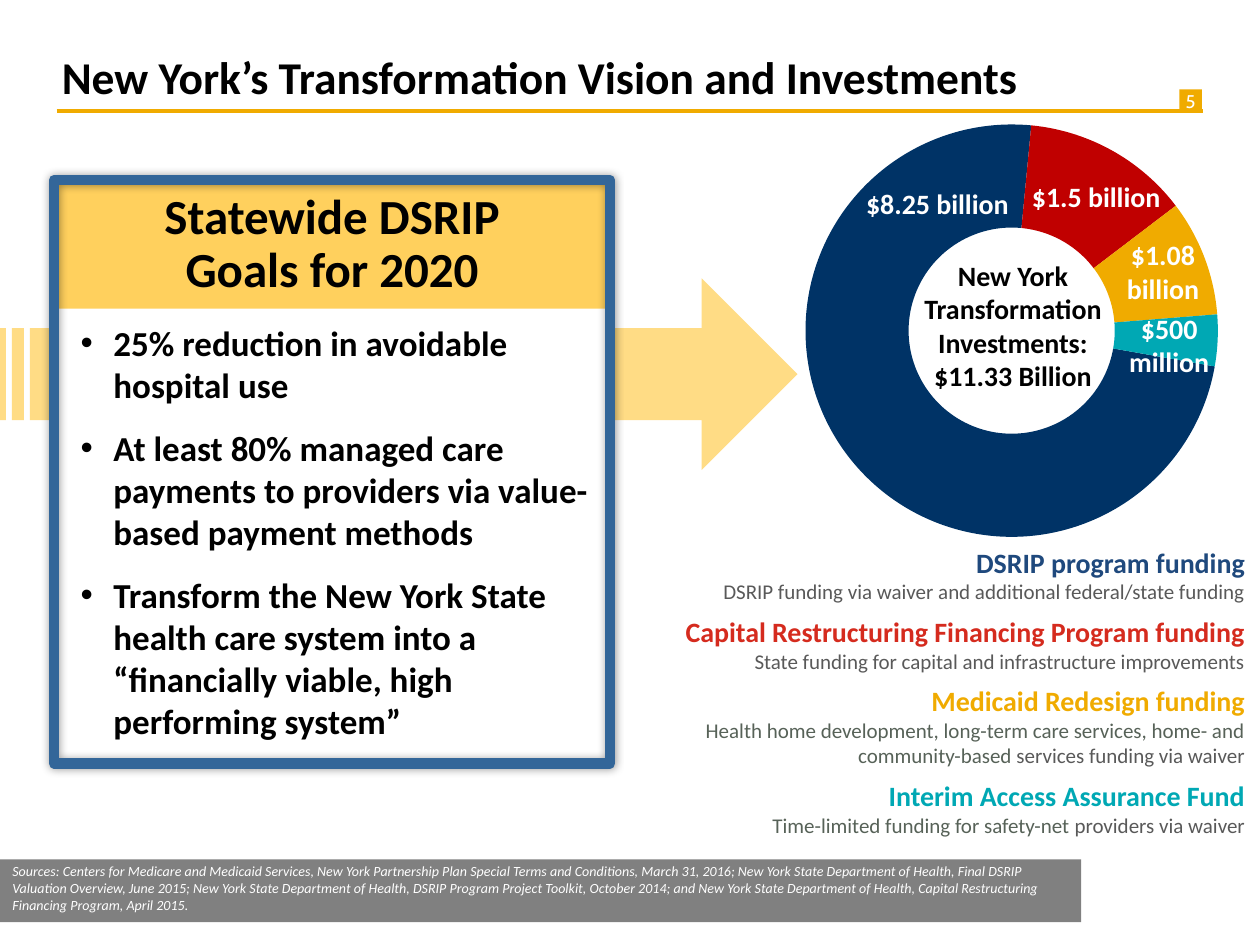
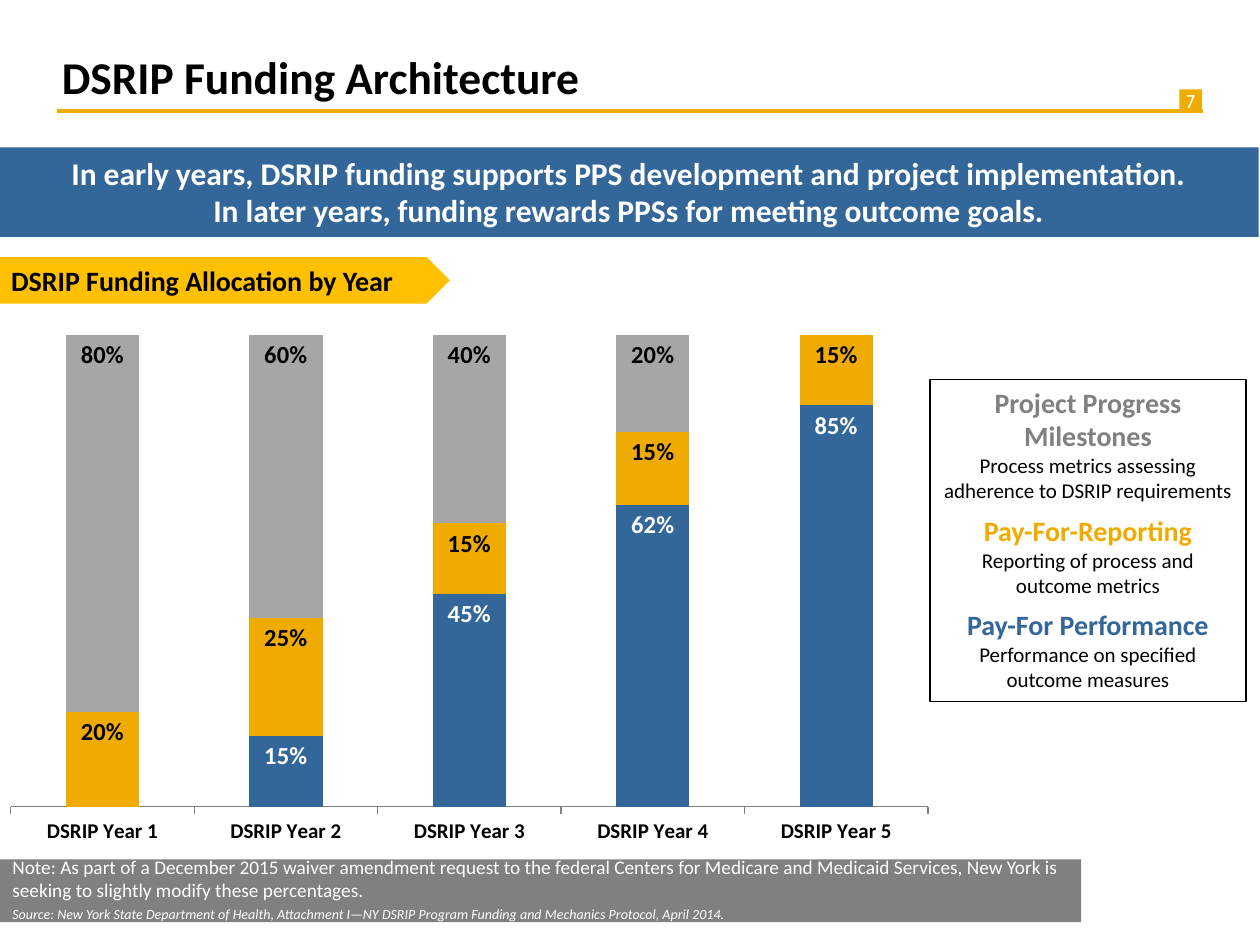
from copy import deepcopy
from dataclasses import dataclass

from lxml import etree
from pptx import Presentation
from pptx.chart.data import CategoryChartData
from pptx.dml.color import RGBColor
from pptx.enum.chart import XL_CHART_TYPE, XL_LABEL_POSITION, XL_TICK_LABEL_POSITION, XL_TICK_MARK
from pptx.enum.shapes import MSO_CONNECTOR, MSO_SHAPE
from pptx.enum.text import MSO_ANCHOR, MSO_AUTO_SIZE, PP_ALIGN
from pptx.oxml.ns import qn
from pptx.util import Inches, Pt

LEFT, CENTER, RIGHT = PP_ALIGN.LEFT, PP_ALIGN.CENTER, PP_ALIGN.RIGHT
TOP, MIDDLE, BOTTOM = MSO_ANCHOR.TOP, MSO_ANCHOR.MIDDLE, MSO_ANCHOR.BOTTOM
RECTANGLE = MSO_SHAPE.RECTANGLE
TITLE_AND_BODY, TITLE_ONLY = 1, 5

SLIDE_WIDTH, SLIDE_HEIGHT = Inches(10), Inches(7.5)
COLUMN, ROW = SLIDE_WIDTH / 100, SLIDE_HEIGHT / 75
FONT, NUMBER_FONT = "Calibri", "Cabin"
COLORS = {
    "black": "000000", "white": "FFFFFF", "gold": "F0AB00", "amber": "FFC000",
    "sand": "FFD05D", "pale": "FFDC85", "blue": "336699", "navy": "003366",
    "ink": "1F497D", "crimson": "C00000", "red": "D52B1E", "teal": "00A8B4",
    "band": "808080", "bar": "A6A6A6", "text": "595959", "olive": "576258",
}


@dataclass
class Box:
    """An area in columns and rows of the slide grid."""
    x: float
    y: float
    w: float
    h: float

    def inner(self, x, y, w, h):
        return Box(self.x + x, self.y + y, w, h)

    def emu(self):
        return (round(self.x * COLUMN), round(self.y * ROW),
                round(self.w * COLUMN), round(self.h * ROW))


def rgb(color):
    return RGBColor.from_string(COLORS[color])


def set_all(target, values):
    for name, value in values.items():
        setattr(target, name, value)


def style(color, size, bold=True, italic=False, font=FONT, **paragraph):
    font_values = {"name": font, "size": Pt(size), "bold": bold, "italic": italic}
    return color, font_values, {"space_before": Pt(0), "space_after": Pt(0), **paragraph}


def write(shape, lines, **frame_values):
    """Fill a shape with (text, style) lines; a text may be a list of (text, color)."""
    frame = shape.text_frame
    set_all(frame, {"word_wrap": True, "auto_size": MSO_AUTO_SIZE.NONE,
                    "vertical_anchor": TOP, **frame_values})
    for index, (text, (color, font_values, paragraph_values)) in enumerate(lines):
        paragraph = frame.add_paragraph() if index else frame.paragraphs[0]
        set_all(paragraph, paragraph_values)
        for piece, piece_color in text if isinstance(text, list) else [(text, color)]:
            for row, words in enumerate(piece.split("\n")):
                if row:
                    paragraph.add_line_break()
                run = paragraph.add_run()
                run.text = words
                set_all(run.font, font_values)
                run.font.color.rgb = rgb(piece_color)
        for line_break in paragraph._p.findall(qn("a:br")):
            line_break.append(deepcopy(run._r.rPr))


def add_text(slide, box, lines, **frame_values):
    write(slide.shapes.add_textbox(*box.emu()), lines, **frame_values)


def add_block(slide, box, fill=None, line=None, line_width=1, kind=RECTANGLE):
    block = slide.shapes.add_shape(kind, *box.emu())
    block.shadow.inherit = False
    if fill:
        block.fill.solid()
        block.fill.fore_color.rgb = rgb(fill)
    else:
        block.fill.background()
    if line:
        block.line.color.rgb = rgb(line)
        block.line.width = Pt(line_width)
    else:
        block.line.fill.background()
    return block


def add_glow(shape):
    """Give a shape a soft, centred shadow."""
    effects = shape._element.spPr.find(qn("a:effectLst"))
    shadow = etree.SubElement(effects, qn("a:outerShdw"), blurRad=str(Pt(5)), dist="0",
                              dir="0", algn="ctr", rotWithShape="0")
    color = etree.SubElement(shadow, qn("a:srgbClr"), val=COLORS["black"])
    etree.SubElement(color, qn("a:alpha"), val="40000")


def set_plot_layout(chart, x, y, w, h):
    """Fix the inner plot area, in shares of the chart."""
    plot_area = chart._chartSpace.find(".//" + qn("c:plotArea"))
    for present in plot_area.findall(qn("c:layout")):
        plot_area.remove(present)
    layout = etree.Element(qn("c:layout"))
    plot_area.insert(0, layout)
    manual = etree.SubElement(layout, qn("c:manualLayout"))
    values = {"layoutTarget": "inner", "xMode": "edge", "yMode": "edge",
              "x": x, "y": y, "w": w, "h": h}
    for name, value in values.items():
        etree.SubElement(manual, qn("c:" + name), val=str(value))


def add_chart(slide, box, kind, categories, series):
    data = CategoryChartData(number_format="0%")
    data.categories = categories
    for name, values in series:
        data.add_series(name, values)
    chart = slide.shapes.add_chart(kind, *box.emu(), data).chart
    chart.has_legend = chart.has_title = False
    set_all(chart.font, {"name": FONT, "size": Pt(12), "bold": True})
    chart.font.color.rgb = rgb("black")
    chart.plots[0].vary_by_categories = False
    return chart


def add_page(deck, layout, title, number):
    """Start a slide with the title, rule, page number and footer band."""
    slide = deck.slides.add_slide(deck.slide_layouts[layout])
    heading = slide.shapes.title
    heading.left, heading.top, heading.width, heading.height = Box(3.9, 3.3, 94.4, 5.4).emu()
    write(heading, [(title, style("black", 26, alignment=LEFT))], vertical_anchor=BOTTOM)

    page_mark = add_block(slide, Box(93.6, 7.1, 1.8, 1.8), "gold")
    write(page_mark, [(str(number), style("white", 10.5, False, font=NUMBER_FONT, alignment=CENTER))],
          vertical_anchor=MIDDLE, word_wrap=False,
          margin_left=0, margin_right=0, margin_top=0, margin_bottom=0)
    left, top, width, _ = Box(4.5, 8.8, 91, 0).emu()
    rule = slide.shapes.add_connector(MSO_CONNECTOR.STRAIGHT, left, top, left + width, top)
    rule.line.color.rgb = rgb("gold")
    rule.line.width = Pt(2)
    etree.SubElement(rule._element.spPr, qn("a:effectLst"))
    add_block(slide, Box(0, 68.2, 85.8, 5), "band")
    return slide


def add_key(key, entries, alignment, detail_color):
    """Write bold coloured headings, each with a plain line under it."""
    lines = []
    for heading, color, detail in entries:
        lines.append((heading, style(color, 16, alignment=alignment)))
        lines.append((detail, style(detail_color, 12, False, alignment=alignment,
                                    space_after=Pt(6))))
    write(key, lines)


def add_goals(slide, box):
    add_block(slide, box.inner(0, 0.4, box.w, 9.8), "sand")
    add_text(slide, box.inner(0, 0.4, box.w, 9.5),
             [("Statewide DSRIP\nGoals for 2020",
               style("black", 28, alignment=CENTER, line_spacing=0.9))],
             vertical_anchor=MIDDLE)
    goals = slide.placeholders[1]
    goals.left, goals.top, goals.width, goals.height = box.inner(0, 10.7, box.w, 34.7).emu()
    goals.fill.solid()
    goals.fill.fore_color.rgb = rgb("white")
    texts = ["25% reduction in avoidable hospital use",
             "At least 80% managed care payments to providers via value-based payment methods",
             "Transform the New York State health care system into a "
             "“financially viable, high performing system”"]
    write(goals, [(text, style("black", 20, alignment=LEFT, space_after=Pt(6),
                               space_before=Pt(6 if index else 0)))
                  for index, text in enumerate(texts)])
    for paragraph in goals.text_frame.paragraphs:
        indents = paragraph._p.get_or_add_pPr()
        indents.set("marL", str(Inches(0.37)))
        indents.set("indent", str(Inches(-0.26)))
    slide.shapes._spTree.append(goals._element)  # in front of the arrow
    add_glow(add_block(slide, box, line="blue", line_width=6))


def add_investments(slide, box):
    chart = add_chart(slide, box, XL_CHART_TYPE.DOUGHNUT, ["1", "2", "3", "4"],
                      [("Series 1", [73, 13, 9, 4])])
    set_plot_layout(chart, 0.05, 0.02, 0.9, 0.96)
    for name, value in {"firstSliceAng": 100, "holeSize": 50}.items():
        chart._chartSpace.find(".//" + qn("c:" + name)).set("val", str(value))
    for index, color in enumerate(["navy", "crimson", "gold", "teal"]):
        wedge = chart.plots[0].series[0].points[index].format
        wedge.fill.solid()
        wedge.fill.fore_color.rgb = rgb(color)
        wedge.line.fill.background()

    add_text(slide, box.inner(7.8, 10.8, 22.6, 11.8),
             [("New York\nTransformation\nInvestments:\n$11.33 Billion",
               style("black", 16, alignment=CENTER))])
    amounts = [("$500\nmillion", 27.3, 15, 8.4, 6.4), ("$1.08\nbillion", 27.1, 9.2, 7.8, 6.4),
               ("$8.25 billion", 5.4, 5.1, 15.4, 3.7), ("$1.5 billion", 19.6, 4.6, 12.2, 3.7)]
    for amount, *place in amounts:
        add_text(slide, box.inner(*place), [(amount, style("white", 16, alignment=CENTER))],
                 word_wrap=False)


def vision_slide(deck):
    slide = add_page(deck, TITLE_AND_BODY, "New York’s Transformation Vision and Investments", 5)
    arrow = add_block(slide, Box(0, 22.1, 63.3, 15.2), "pale", kind=MSO_SHAPE.STRIPED_RIGHT_ARROW)
    arrow.adjustments[0] = 0.48
    arrow.adjustments[1] = 0.5
    add_text(slide, Box(0, 68, 85.8, 5), [(
        "Sources: Centers for Medicare and Medicaid Services, New York Partnership Plan Special Terms "
        "and Conditions, March 31, 2016; New York State Department of Health, Final DSRIP Valuation "
        "Overview, June 2015; New York State Department of Health, DSRIP Program Project Toolkit, "
        "October 2014; and New York State Department of Health, Capital Restructuring Financing "
        "Program, April 2015.", style("white", 8, False, True))])
    funding_key = slide.shapes.add_textbox(*Box(51.7, 42.8, 48.1, 24.4).emu())
    add_key(funding_key, [
        ("DSRIP program funding", "ink",
         "DSRIP funding via waiver and additional federal/state funding"),
        ("Capital Restructuring Financing Program funding", "red",
         "State funding for capital and infrastructure improvements"),
        ("Medicaid Redesign funding", "gold",
         [("Health home development, long-term care services, home- and community-based ", "olive"),
          ("services funding via waiver", "text")]),
        ("Interim Access Assurance Fund", "teal",
         [("Time-limited funding for safety-net ", "olive"), ("providers via waiver", "text")]),
    ], RIGHT, "text")
    add_goals(slide, Box(4.3, 14.3, 44.1, 46.3))
    add_investments(slide, Box(61.3, 9.2, 38, 34.1))


def add_allocation(slide, box):
    shares = [("Series 1", [0, 0.15, 0.45, 0.62, 0.85]),
              ("Series 2", [0.2, 0.25, 0.15, 0.15, 0.15]),
              ("Series 3", [0.8, 0.6, 0.4, 0.2, 0])]
    chart = add_chart(slide, box, XL_CHART_TYPE.COLUMN_STACKED_100,
                      [f"DSRIP Year {year}" for year in range(1, 6)], shares)
    set_plot_layout(chart, 0, 0.03, 1, 0.89)
    set_all(chart.plots[0], {"gap_width": 150, "overlap": 100})
    set_all(chart.value_axis, {"visible": False, "has_major_gridlines": False})
    set_all(chart.category_axis, {"major_tick_mark": XL_TICK_MARK.OUTSIDE,
                                  "tick_label_position": XL_TICK_LABEL_POSITION.LOW})
    chart.category_axis.format.line.color.rgb = rgb("band")
    looks = [("blue", "white"), ("gold", "black"), ("bar", "black")]
    for series, (fill, label_color) in zip(chart.plots[0].series, looks):
        series.format.fill.solid()
        series.format.fill.fore_color.rgb = rgb(fill)
        labels = series.data_labels
        set_all(labels, {"show_value": True, "position": XL_LABEL_POSITION.INSIDE_END,
                         "number_format": "0%;;", "number_format_is_linked": False})
        set_all(labels.font, {"name": FONT, "size": Pt(14), "bold": True})
        labels.font.color.rgb = rgb(label_color)


def architecture_slide(deck):
    slide = add_page(deck, TITLE_ONLY, "DSRIP Funding Architecture", 7)
    add_allocation(slide, Box(0.8, 25.3, 72.9, 42.1))
    add_text(slide, Box(0, 67.4, 86, 6.3), [
        ("Note: As part of a December 2015 waiver amendment request to the federal Centers for Medicare "
         "and Medicaid Services, New York is seeking to slightly modify these percentages.",
         style("white", 11, False)),
        ("Source: New York State Department of Health, Attachment I—NY DSRIP Program Funding and "
         "Mechanics Protocol, April 2014.", style("white", 8, False, True, space_before=Pt(2)))])
    measure_key = add_block(slide, Box(73.8, 30.1, 25.1, 25.6), line="black", line_width=0.75)
    add_key(measure_key, [
        ("Project Progress Milestones", "band",
         "Process metrics assessing adherence to DSRIP requirements"),
        ("Pay-For-Reporting", "gold", "Reporting of process and outcome metrics"),
        ("Pay-For Performance", "blue", "Performance on specified outcome measures"),
    ], CENTER, "black")
    message = add_block(slide, Box(-0.1, 11.7, 100, 7.1), "blue")
    write(message, [("In early years, DSRIP funding supports PPS development and project implementation.\n"
                     "In later years, funding rewards PPSs for meeting outcome goals.",
                     style("white", 18, alignment=CENTER))])
    chart_heading = add_block(slide, Box(-0.1, 20.4, 35.8, 3.7), "amber", kind=MSO_SHAPE.PENTAGON)
    write(chart_heading, [("DSRIP Funding Allocation by Year", style("black", 16, alignment=LEFT))])


def main():
    deck = Presentation()
    deck.slide_width, deck.slide_height = SLIDE_WIDTH, SLIDE_HEIGHT
    vision_slide(deck)
    architecture_slide(deck)
    deck.save("out.pptx")


if __name__ == "__main__":
    main()
